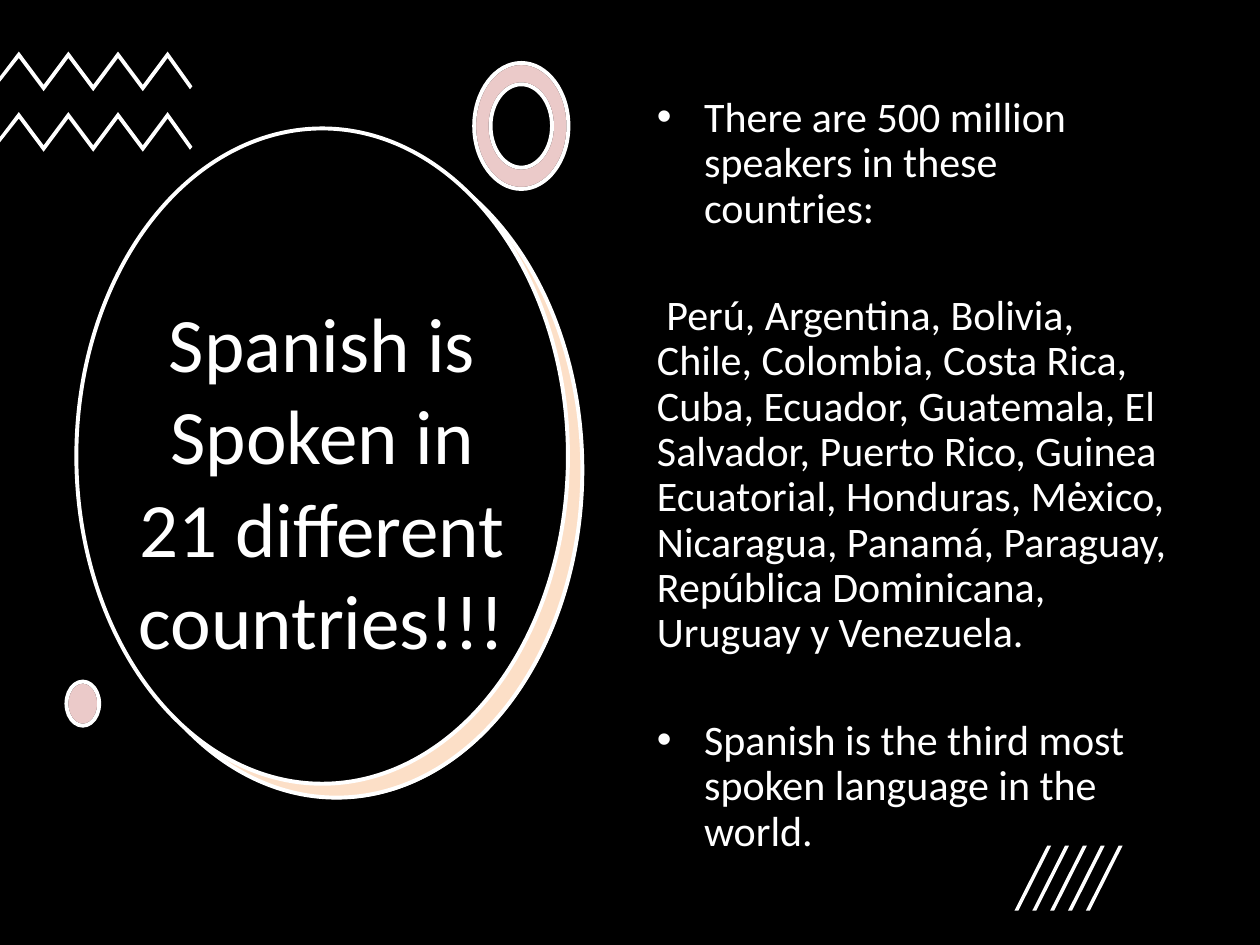
from lxml.etree import SubElement
from pptx import Presentation
from pptx.dml.color import RGBColor
from pptx.enum.shapes import MSO_SHAPE
from pptx.enum.text import MSO_ANCHOR, MSO_AUTO_SIZE, PP_ALIGN
from pptx.oxml.ns import qn
from pptx.util import Cm, Pt

BLACK = RGBColor(0x00, 0x00, 0x00)
WHITE = RGBColor(0xFF, 0xFF, 0xFF)
ORANGE = RGBColor(0xF7, 0x96, 0x46)
RED = RGBColor(0xC0, 0x50, 0x4D)

# Content
TITLE = "Spanish is Spoken in 21 different countries!!!"
BODY = [  # text, bulleted
    ("There are 500 million speakers in these countries:", True),
    (" Perú, Argentina, Bolivia, Chile, Colombia, Costa Rica, Cuba, Ecuador, "
     "Guatemala, El Salvador, Puerto Rico, Guinea Ecuatorial, Honduras, Mėxico, "
     "Nicaragua, Panamá, Paraguay, República Dominicana, Uruguay y Venezuela.", False),
    ("Spanish is the third most spoken language in the world.", True),
]

# Places in cm: left, top, width, height
TITLE_BOX = (2.29, 5.21, 8.41, 8.94)
BODY_BOX = (12.99, 1.81, 10.87, 15.7)
OVALS = [  # box, fill, opacity in percent, line
    ((1.85, 2.9, 9.91, 13.21), WHITE, 100, None),
    ((1.83, 2.87, 9.91, 13.21), ORANGE, 30, WHITE),
    ((1.54, 2.59, 9.91, 13.21), BLACK, 100, WHITE),
]
TINTED = [(WHITE, 100, BLACK), (RED, 30, WHITE)]
DOT_BOX = (1.34, 13.74, 0.66, 0.89)
RING_CENTRE = (10.51, 2.54)
RING_RADII = [(0.95, 1.27), (0.62, 0.84)]
ZIGZAG_TOPS = (1.04, 2.26)
SLASHES = dict(left=20.45, top=17.05, gap=0.36, count=5)


def style(sp, fill, opacity=100, line=None):
    sp.shadow.inherit = False
    sp.fill.solid()
    sp.fill.fore_color.rgb = fill
    if opacity < 100:
        color = sp.element.spPr.find(".//" + qn("a:srgbClr"))
        SubElement(color, qn("a:alpha"), val=str(opacity * 1000))
    if line is None:
        sp.line.fill.background()
    else:
        sp.line.color.rgb = line
        sp.line.width = Pt(2.25)


def add_preset(shapes, kind, box, *look):
    style(shapes.add_shape(kind, *map(Cm, box)), *look)


def add_outline(shapes, contours, *look, curved=False):
    contours = [[(Cm(x), Cm(y)) for x, y in c] for c in contours]
    builder = shapes.build_freeform(*contours[0][0])
    for i, points in enumerate(contours):
        if i:
            builder.move_to(*points[0])
        builder.add_line_segments(points[1:], close=True)
    sp = builder.convert_to_shape()
    if curved:
        bend_lines(sp)
    style(sp, *look)


def bend_lines(sp):
    """Join every three line segments into one Bézier curve."""
    lines = list(sp.element.iter(qn("a:lnTo")))
    for i in range(0, len(lines), 3):
        curve = lines[i].makeelement(qn("a:cubicBezTo"))
        lines[i].addprevious(curve)
        for line in lines[i:i + 3]:
            curve.append(line[0])
            line.getparent().remove(line)


def ellipse_curve(centre, radii, direction, k=0.55):
    quarters = [(1, 0), (1, k), (k, 1), (0, 1), (-k, 1), (-1, k), (-1, 0),
                (-1, -k), (-k, -1), (0, -1), (k, -1), (1, -k), (1, 0)]
    return [(centre[0] + radii[0] * x, centre[1] + direction * radii[1] * y)
            for x, y in quarters]


def zigzag(top, step=0.5, first=0.38, drop=0.67, thick=0.13):
    bends = [(first + step * i, top + drop * (i % 2)) for i in range(7)]
    upper = [(0, top + 0.5)] + bends + [(3.88, top + 0.7)]
    lower = [(3.83, top + 0.76)] + [(x, y + thick) for x, y in reversed(bends)]
    return upper + lower + [(0, top + 0.61)]


def slash(left, top, width=0.74, height=1.31, thick=0.08):
    return [(left + thick, top + height), (left, top + height),
            (left + width - thick, top), (left + width, top)]


def place(sp, box, anchor):
    sp.left, sp.top, sp.width, sp.height = map(Cm, box)
    tf = sp.text_frame
    for name, value in dict(word_wrap=True, auto_size=MSO_AUTO_SIZE.NONE,
                            vertical_anchor=anchor).items():
        setattr(tf, name, value)
    return tf


def write(p, text, size, **formats):
    r = p.add_run()
    r.text = text
    r.font.color.rgb = WHITE
    for name, value in dict(name="Calibri", size=Pt(size)).items():
        setattr(r.font, name, value)
    for name, value in formats.items():
        setattr(p, name, value)


def set_bullet(p, bulleted):
    pPr = p._p.get_or_add_pPr()
    indent = Cm(0.95) if bulleted else 0
    pPr.set("marL", str(indent))
    pPr.set("indent", str(-indent))
    if bulleted:
        SubElement(pPr, qn("a:buFont"), typeface="Arial")
        SubElement(pPr, qn("a:buChar"), char="•")
    else:
        SubElement(pPr, qn("a:buNone"))


prs = Presentation()
prs.slide_width, prs.slide_height = Cm(25.4), Cm(19.05)
s = prs.slides.add_slide(prs.slide_layouts[1])
title, body = s.placeholders

# Backdrop and large ovals
add_preset(s.shapes, MSO_SHAPE.RECTANGLE, (0, 0, 25.4, 19.05), BLACK)
for box, *look in OVALS:
    add_preset(s.shapes, MSO_SHAPE.OVAL, box, *look)

# Title, brought in front of the ovals
s.shapes.element.append(title.element)
tf = place(title, TITLE_BOX, MSO_ANCHOR.MIDDLE)
write(tf.paragraphs[0], TITLE, 44, alignment=PP_ALIGN.CENTER)

# Zigzags
group = s.shapes.add_group_shape()
for top in ZIGZAG_TOPS:
    add_outline(group.shapes, [zigzag(top)], WHITE)

# Ring and dot, each a white base under a tint
ring = [ellipse_curve(RING_CENTRE, radii, d) for radii, d in zip(RING_RADII, (1, -1))]
for look in TINTED:
    add_outline(s.shapes, ring, *look, curved=True)
for look in TINTED:
    add_preset(s.shapes, MSO_SHAPE.OVAL, DOT_BOX, *look)

# Body, in front of the backdrop
s.shapes.element.append(body.element)
tf = place(body, BODY_BOX, MSO_ANCHOR.TOP)
for i, (text, bulleted) in enumerate(BODY):
    p = tf.add_paragraph() if i else tf.paragraphs[0]
    write(p, text, 24, line_spacing=0.9, space_before=Pt(35.5 if i else 0))
    set_bullet(p, bulleted)

# Slashes
group = s.shapes.add_group_shape()
for i in range(SLASHES["count"]):
    left = SLASHES["left"] + i * SLASHES["gap"]
    add_outline(group.shapes, [slash(left, SLASHES["top"])], WHITE)

prs.save("out.pptx")
